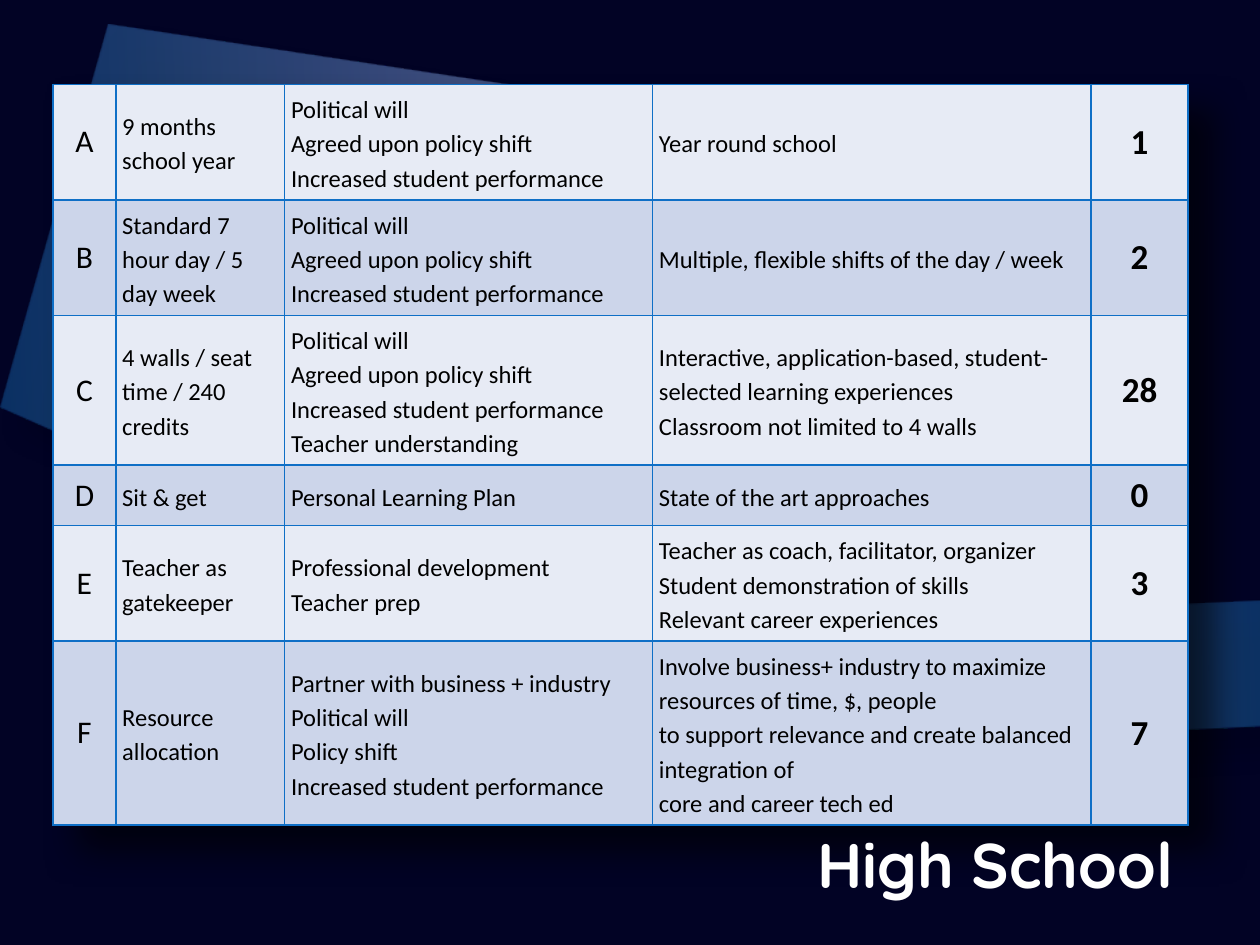
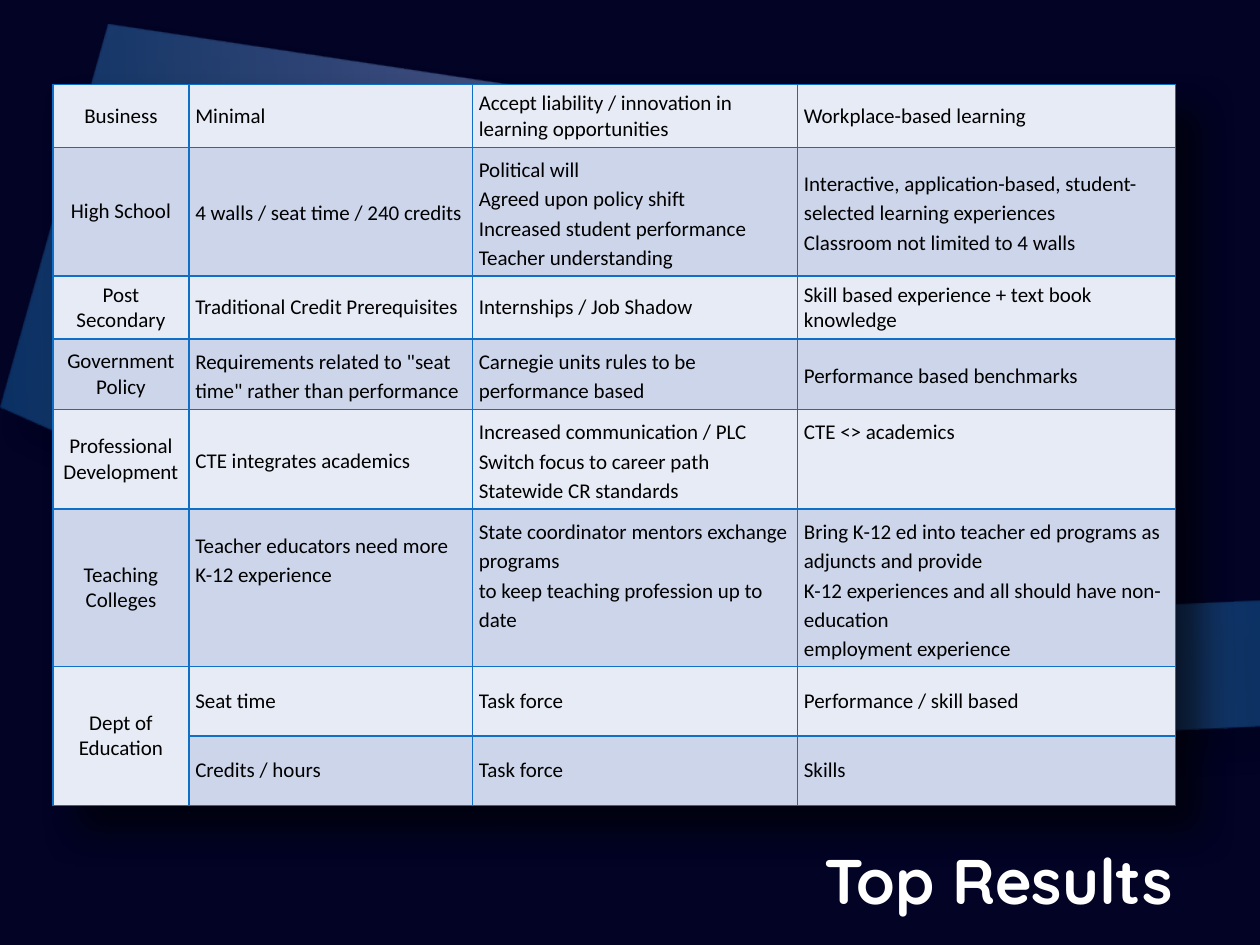
"""Build two result-table slides on a dark background with a state outline."""
import math

from lxml import etree
from pptx import Presentation
from pptx import util as u
from pptx.dml.color import RGBColor
from pptx.enum import shapes, text
from pptx.oxml import ns

BLACK = RGBColor(0x00, 0x00, 0x00)
WHITE = RGBColor(0xFF, 0xFF, 0xFF)
NAVY = RGBColor(0x0A, 0x0D, 0x96)
BORDER = RGBColor(0x0F, 0x6F, 0xC6)
BANDS = (RGBColor(0xE7, 0xEB, 0xF5), RGBColor(0xCC, 0xD5, 0xEA))
DEEP_BLUE = RGBColor(0x0C, 0x59, 0x9F)
MID_BLUE = RGBColor(0x6B, 0x8F, 0xCF)
PALE_BLUE = RGBColor(0x91, 0xA9, 0xDD)
STATE_STOPS = ((0, DEEP_BLUE), (33, MID_BLUE), (47, PALE_BLUE),
               (53, PALE_BLUE), (68, MID_BLUE), (100, DEEP_BLUE))
BODY_FONT, TITLE_FONT = "Calibri", "Quicksand"
LOOSE = 1.15
MARGIN = 0.05
STATE_TILT = -2.7
STATE_CENTER = (5.1, 2.96)
STATE_OUTLINE = (
    (0.62, 0.54), (0.53, 3.71), (2.51, 3.8), (2.58, 5.39), (3.05, 5.39),
    (3.95, 5.41), (5.15, 5.42), (6.47, 5.43), (7.76, 5.42), (8.61, 5.41),
    (9.08, 5.39), (9.43, 5.37), (9.68, 5.35), (9.77, 5.32), (9.8, 5.21),
    (9.77, 5.15), (9.69, 5.1), (9.62, 5.06), (9.55, 5), (9.52, 4.94),
    (9.5, 4.85), (9.46, 4.77), (9.41, 4.69), (9.35, 4.6), (9.35, 4.41),
    (9.21, 4.31), (9.2, 4.07), (9.2, 3.89), (9.17, 3.82), (9.12, 3.74),
    (9.11, 3.66), (9.06, 3.31), (9, 3.23), (8.96, 3.15), (8.95, 2.98),
    (8.9, 2.9), (8.83, 2.79), (8.82, 2.52), (8.8, 2.19), (8.74, 2.13),
    (8.68, 2.12), (8.63, 2.04), (8.59, 2.02), (8.58, 1.91), (8.56, 1.81),
    (8.48, 1.68), (8.44, 1.6), (8.41, 1.5), (8.35, 1.45), (8.27, 1.41),
    (8.09, 1.14), (8.01, 1.12), (8.05, 1.1), (7.99, 1.05), (7.87, 1.01),
    (7.76, 0.98), (7.66, 0.95), (7.59, 0.87), (7.56, 0.81), (7.47, 0.81),
    (7.35, 0.84), (7.25, 0.86), (7.13, 0.9), (6.65, 0.9), (6.52, 0.79),
    (6.2, 0.62))

POLICY = "Political will\nAgreed upon policy shift\nIncreased student performance"
SEAT_TIME = "4 walls / seat time / 240 credits"
TEACHERS = POLICY + "\nTeacher understanding"
INTERACTIVE = ("Interactive, application-based, student-selected learning experiences\n"
               "Classroom not limited to 4 walls")

HIGH_SCHOOL_ROWS = (
    ("A", "9 months school year", POLICY, "Year round school", "1"),
    ("B", "Standard 7 hour day / 5 day week", POLICY,
     "Multiple, flexible shifts of the day / week", "2"),
    ("C", SEAT_TIME, TEACHERS, INTERACTIVE, "28"),
    ("D", "Sit & get", "Personal Learning Plan", "State of the art approaches", "0"),
    ("E", "Teacher as gatekeeper", "Professional development\nTeacher prep",
     "Teacher as coach, facilitator, organizer\nStudent demonstration of skills\n"
     "Relevant career experiences", "3"),
    ("F", "Resource allocation",
     "Partner with business + industry\nPolitical will\nPolicy shift\n"
     "Increased student performance",
     "Involve business+ industry to maximize resources of time, $, people\n"
     "to support relevance and create balanced integration of\n"
     "core and career tech ed", "7"),
)
TOP_ROWS = (
    ("Business", "Minimal", "Accept liability / innovation in learning opportunities",
     "Workplace-based learning"),
    ("High School", SEAT_TIME, TEACHERS, INTERACTIVE),
    ("Post Secondary", "Traditional Credit Prerequisites", "Internships / Job Shadow",
     "Skill based experience + text book knowledge"),
    ("Government Policy", 'Requirements related to "seat time" rather than performance',
     "Carnegie units rules to be performance based", "Performance based benchmarks"),
    ("Professional Development", "CTE integrates academics",
     "Increased communication / PLC\nSwitch focus to career path\n"
     "Statewide CR standards", "CTE <> academics"),
    ("Teaching Colleges", "Teacher educators need more K-12 experience",
     "State coordinator mentors exchange programs\n"
     "to keep teaching profession up to date",
     "Bring K-12 ed into teacher ed programs as adjuncts and provide\n"
     "K-12 experiences and all should have non-education\nemployment experience"),
    ("Dept of Education", "Seat time", "Task force", "Performance / skill based"),
    ("", "Credits / hours", "Task force", "Skills"),
)
TOP_LOOSE_ROWS = (1, 3, 4, 5)
TOP_ANCHORED = {(4, 3): MARGIN, (5, 1): 0.16, (5, 2): MARGIN}


def write_text(frame, content, size=12, font=BODY_FONT, color=BLACK, bold=False,
               align=text.PP_ALIGN.LEFT, spacing=None):
    """Fill a text frame with one formatted paragraph per line."""
    frame.word_wrap = True
    for index, line in enumerate(content.split("\n")):
        paragraph = frame.add_paragraph() if index else frame.paragraphs[0]
        paragraph.alignment = align
        if spacing:
            paragraph.line_spacing = spacing
        run = paragraph.add_run()
        run.text = line
        run.font.size, run.font.name, run.font.bold = u.Pt(size), font, bold
        run.font.color.rgb = color


def add_color(parent, color, opacity=100):
    """Append a colour element with an opacity in percent."""
    element = etree.SubElement(parent, ns.qn("a:srgbClr"), val=str(color))
    if opacity < 100:
        etree.SubElement(element, ns.qn("a:alpha"), val=str(opacity * 1000))


def add_shadow(effects, blur, distance, opacity):
    """Append a shadow falling to the lower right."""
    shadow = etree.SubElement(
        effects, ns.qn("a:outerShdw"), blurRad=str(u.Pt(blur)),
        dist=str(u.Pt(distance)), dir="2700000", algn="tl", rotWithShape="0")
    add_color(shadow, BLACK, opacity)


def add_state(slide):
    """Draw the tilted, half-transparent state outline."""
    angle = math.radians(-STATE_TILT)
    center_x, center_y = STATE_CENTER
    points = []
    for x, y in STATE_OUTLINE:
        dx, dy = x - center_x, y - center_y
        points.append((center_x + dx * math.cos(angle) - dy * math.sin(angle),
                       center_y + dx * math.sin(angle) + dy * math.cos(angle)))
    builder = slide.shapes.build_freeform(*points[0], scale=u.Inches(1))
    builder.add_line_segments(points[1:], close=True)
    state = builder.convert_to_shape()
    state.rotation = STATE_TILT
    state.line.fill.background()
    state.fill.gradient()
    state.fill.gradient_angle = 0
    properties = state.element.spPr
    stops = properties.find(".//" + ns.qn("a:gsLst"))
    for stop in list(stops):
        stops.remove(stop)
    for position, color in STATE_STOPS:
        stop = etree.SubElement(stops, ns.qn("a:gs"), pos=str(position * 1000))
        add_color(stop, color, 50)
    state.shadow.inherit = False
    add_shadow(properties.find(ns.qn("a:effectLst")), 15, 18, 26)


def add_backdrop(presentation):
    """Add a slide with the black ground, navy veil and state outline."""
    slide = presentation.slides.add_slide(presentation.slide_layouts[6])
    slide.background.fill.solid()
    slide.background.fill.fore_color.rgb = BLACK
    veil = slide.shapes.add_shape(shapes.MSO_SHAPE.RECTANGLE, 0, 0,
                                  presentation.slide_width, presentation.slide_height)
    veil.shadow.inherit = False
    veil.line.fill.background()
    veil.fill.solid()
    veil.fill.fore_color.rgb = NAVY
    color = veil.element.spPr.find(".//" + ns.qn("a:srgbClr"))
    etree.SubElement(color, ns.qn("a:alpha"), val="25000")
    add_state(slide)
    return slide


def add_title(slide, title, top):
    """Place the right-aligned title at the foot of the slide."""
    box = slide.shapes.add_textbox(u.Inches(5.83), u.Inches(top),
                                   u.Inches(3.58), u.Inches(0.71))
    write_text(box.text_frame, title, size=36, font=TITLE_FONT, color=WHITE,
               bold=True, align=text.PP_ALIGN.RIGHT)
    box.text_frame.auto_size = text.MSO_AUTO_SIZE.SHAPE_TO_FIT_TEXT


def style_cell(cell, band):
    """Set the fill, margins and blue borders of a cell."""
    cell.fill.solid()
    cell.fill.fore_color.rgb = band
    cell.vertical_anchor = text.MSO_ANCHOR.MIDDLE
    cell.margin_left = cell.margin_right = u.Inches(MARGIN)
    cell.margin_top = cell.margin_bottom = u.Inches(MARGIN)
    properties = cell._tc.get_or_add_tcPr()
    for index, side in enumerate(("lnL", "lnR", "lnT", "lnB")):
        line = etree.Element(ns.qn("a:" + side), w=str(u.Pt(1)))
        add_color(etree.SubElement(line, ns.qn("a:solidFill")), BORDER)
        properties.insert(index, line)


def add_grid(slide, rows, widths, heights, cell_format):
    """Add a banded, shadowed table; cell_format gives each cell's text format."""
    frame = slide.shapes.add_table(
        len(rows), len(widths), u.Inches(0.42), u.Inches(0.67),
        u.Inches(sum(widths)), u.Inches(sum(heights)))
    table = frame.table
    table.first_row = table.horz_banding = False
    effects = etree.Element(ns.qn("a:effectLst"))
    add_shadow(effects, 20, 20, 60)
    table._tbl.tblPr.insert(0, effects)
    for column, width in zip(table.columns, widths):
        column.width = u.Inches(width)
    for row_index, (contents, height) in enumerate(zip(rows, heights)):
        table.rows[row_index].height = u.Inches(height)
        for column_index, content in enumerate(contents):
            cell = table.cell(row_index, column_index)
            style_cell(cell, BANDS[row_index % 2])
            if content:
                write_text(cell.text_frame, content,
                           **cell_format(row_index, column_index))
    return table


def high_school_format(row, column):
    """Format letters, body text and vote counts by column."""
    if column == 0:
        return {"size": 18, "align": text.PP_ALIGN.CENTER}
    if column == 4:
        return {"size": 20, "bold": True, "align": text.PP_ALIGN.CENTER}
    return {"size": 14, "spacing": LOOSE}


def top_results_format(row, column):
    """Center the group names and loosen the longer rows."""
    if column == 0:
        return {"align": text.PP_ALIGN.CENTER}
    return {"spacing": LOOSE if row in TOP_LOOSE_ROWS else None}


def build_high_school(presentation):
    """Build the slide of high school votes."""
    slide = add_backdrop(presentation)
    add_grid(slide, HIGH_SCHOOL_ROWS, (0.5, 1.34, 2.92, 3.48, 0.77),
             (0.9, 0.9, 1.17, 0.48, 0.9, 1.44), high_school_format)
    add_title(slide, "High School", 6.5)


def build_top_results(presentation):
    """Build the slide of top results by group."""
    slide = add_backdrop(presentation)
    table = add_grid(slide, TOP_ROWS, (1.08, 2.25, 2.58, 3),
                     (0.5, 1.02, 0.5, 0.56, 0.79, 1.25, 0.55, 0.55),
                     top_results_format)
    table.cell(6, 0).merge(table.cell(7, 0))
    for position, margin in TOP_ANCHORED.items():
        cell = table.cell(*position)
        cell.vertical_anchor = text.MSO_ANCHOR.TOP
        cell.margin_top = u.Inches(margin)
    add_title(slide, "Top Results", 6.63)


def main():
    """Build and save the presentation."""
    presentation = Presentation()
    presentation.slide_width, presentation.slide_height = u.Inches(10), u.Inches(7.5)
    build_high_school(presentation)
    build_top_results(presentation)
    presentation.save("out.pptx")


if __name__ == "__main__":
    main()
